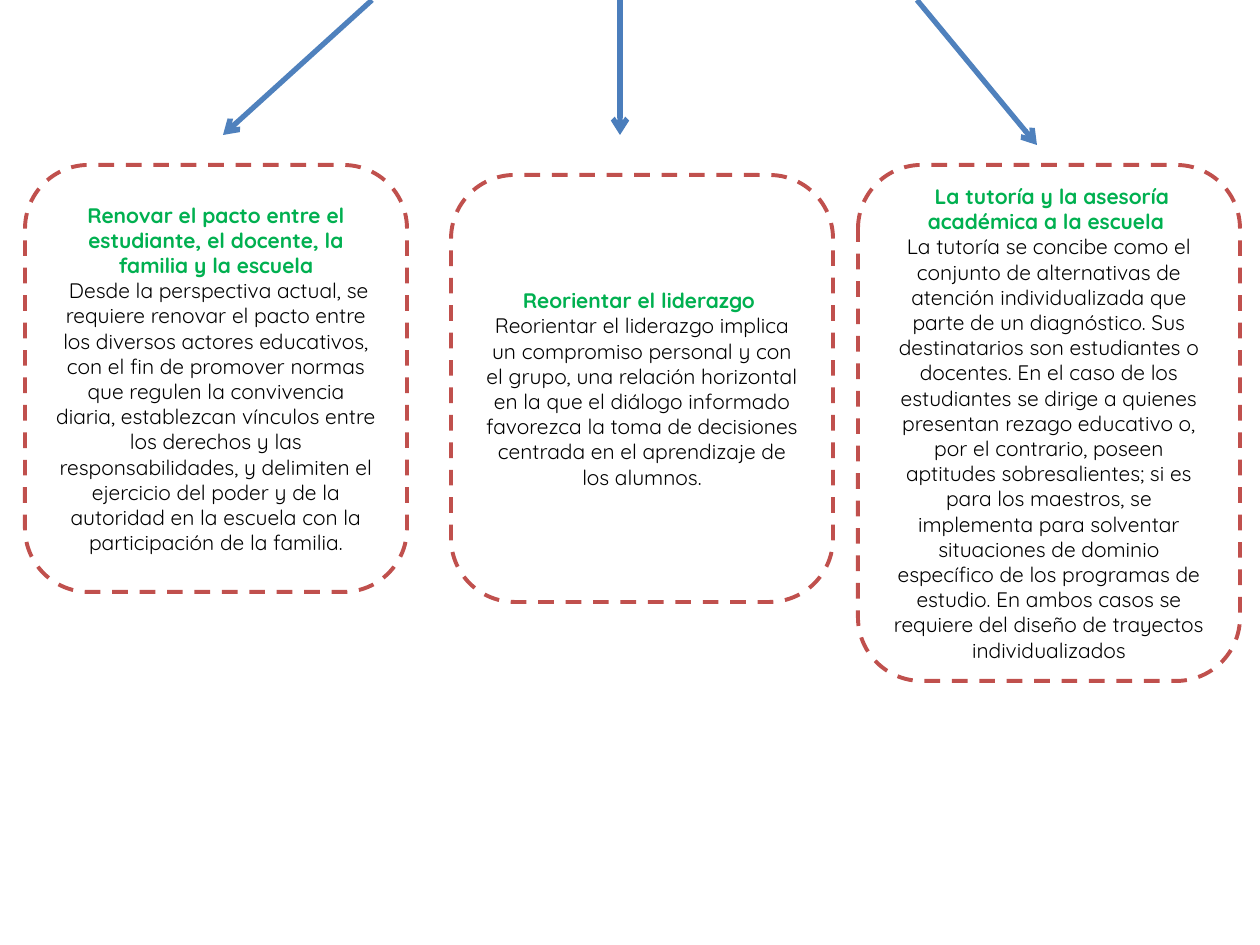
from lxml.etree import SubElement
from pptx import Presentation
from pptx.dml.color import RGBColor
from pptx.enum.dml import MSO_LINE
from pptx.enum.shapes import MSO_CONNECTOR, MSO_SHAPE
from pptx.enum.text import MSO_ANCHOR, PP_ALIGN
from pptx.oxml.ns import qn
from pptx.util import Emu, Pt

EMU_PER_PX = 914400 / 126
WHITE = RGBColor(0xFF, 0xFF, 0xFF)
BLACK = RGBColor(0x00, 0x00, 0x00)
GREEN = RGBColor(0x00, 0xB0, 0x50)
RED = RGBColor(0xC0, 0x50, 0x4D)
BLUE = RGBColor(0x4F, 0x81, 0xBD)
MID_BLUE = RGBColor(0x4B, 0x7E, 0xBC)
FONT = {"name": "Quicksand", "size": Pt(12)}
CARD_WIDTH = 382

ARROWS = [
    ((917, 0), (1037, 145), BLUE),
    ((372, 0), (223, 135), BLUE),
    ((620, 0), (620, 135), MID_BLUE),
]

CARDS = [
    (
        (451, 175, CARD_WIDTH, 427),
        "Reorientar el liderazgo ",
        "Reorientar el liderazgo implica un compromiso personal y con el grupo, "
        "una relación horizontal en la que el diálogo informado favorezca la toma "
        "de decisiones centrada en el aprendizaje de los alumnos.",
    ),
    (
        (25, 165, CARD_WIDTH, 427),
        "Renovar el pacto entre el estudiante, el docente, la familia y la escuela",
        " Desde la perspectiva actual, se requiere renovar el pacto entre los "
        "diversos actores educativos, con el fin de promover normas que regulen la "
        "convivencia diaria, establezcan vínculos entre los derechos y las "
        "responsabilidades, y delimiten el ejercicio del poder y de la autoridad "
        "en la escuela con la participación de la familia.",
    ),
    (
        (858, 165, CARD_WIDTH, 516),
        " La tutoría y la asesoría académica a la escuela ",
        "La tutoría se concibe como el conjunto de alternativas de atención "
        "individualizada que parte de un diagnóstico. Sus destinatarios son "
        "estudiantes o docentes. En el caso de los estudiantes se dirige a quienes "
        "presentan rezago educativo o, por el contrario, poseen aptitudes "
        "sobresalientes; si es para los maestros, se implementa para solventar "
        "situaciones de dominio específico de los programas de estudio. En ambos "
        "casos se requiere del diseño de trayectos individualizados",
    ),
]


def px(length):
    return Emu(round(length * EMU_PER_PX))


def add_arrow(page, start, end, color):
    arrow = page.shapes.add_connector(
        MSO_CONNECTOR.STRAIGHT, *map(px, (*start, *end))
    )
    arrow.line.width = Pt(3)
    arrow.line.color.rgb = color
    SubElement(arrow.line._get_or_add_ln(), qn("a:tailEnd"), type="arrow")
    SubElement(arrow._element.spPr, qn("a:effectLst"))


def write_para(para, text, color, bold):
    para.alignment = PP_ALIGN.CENTER
    span = para.add_run()
    span.text = text
    for name, value in {**FONT, "bold": bold}.items():
        setattr(span.font, name, value)
    span.font.color.rgb = color


def add_card(page, box, title, body):
    card = page.shapes.add_shape(MSO_SHAPE.ROUNDED_RECTANGLE, *map(px, box))
    card.shadow.inherit = False
    card.fill.solid()
    card.fill.fore_color.rgb = WHITE
    card.line.color.rgb = RED
    for name, value in {"width": Pt(2.25), "dash_style": MSO_LINE.DASH}.items():
        setattr(card.line, name, value)
    frame = card.text_frame
    for name, value in {
        "word_wrap": True,
        "vertical_anchor": MSO_ANCHOR.MIDDLE,
    }.items():
        setattr(frame, name, value)
    write_para(frame.paragraphs[0], title, GREEN, True)
    write_para(frame.add_paragraph(), body, BLACK, False)


def main():
    deck = Presentation()
    deck.slide_width, deck.slide_height = px(1260), px(945)
    page = deck.slides.add_slide(deck.slide_layouts[6])
    for arrow in ARROWS:
        add_arrow(page, *arrow)
    for card in CARDS:
        add_card(page, *card)
    deck.save("out.pptx")


if __name__ == "__main__":
    main()
